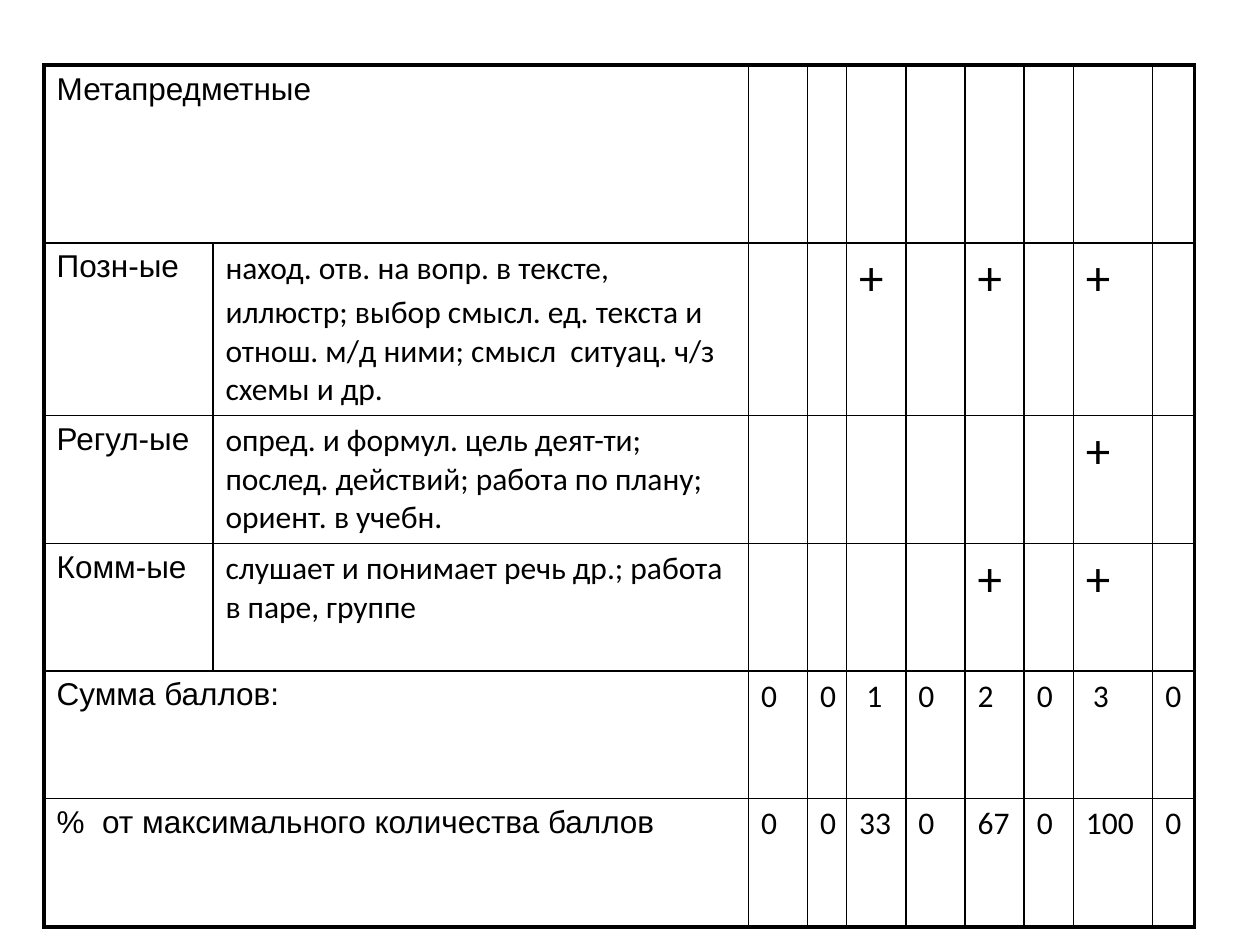
from lxml import etree
from pptx import Presentation
from pptx import util as u
from pptx.dml.color import RGBColor
from pptx.oxml.ns import qn

HUES = {"ink": "000000"}
HEAD = {"name": "Arial", "size": u.Pt(18)}
BODY = {"name": "Calibri", "size": u.Pt(18)}
MARK = {"name": "Calibri", "size": u.Pt(28)}
PADS = {"margin_left": u.Inches(0.1), "margin_right": u.Inches(0.1),
        "margin_top": u.Inches(0.05), "margin_bottom": u.Inches(0.05)}

COLS = [13.4, 42.5, 4.7, 3.1, 4.7, 4.7, 4.7, 3.9, 6.3, 3.3]
ROWS = [18.8, 18.1, 13.5, 13.5, 13.5, 13.6]
SKILLS = [
    ["Метапредметные", None] + [""] * 8,
    ["Позн-ые", "наход. отв. на вопр. в тексте,\nиллюстр; выбор смысл. ед. текста и "
     "отнош. м/д ними; смысл  ситуац. ч/з схемы и др.",
     "", "", "+", "", "+", "", "+", ""],
    ["Регул-ые", "опред. и формул. цель деят-ти; послед. действий; "
     "работа по плану; ориент. в учебн.",
     "", "", "", "", "", "", "+", ""],
    ["Комм-ые", "слушает и понимает речь др.; работа в паре, группе",
     "", "", "", "", "+", "", "+", ""],
    ["Сумма баллов:", None, "0", "0", " 1", "0", "2", "0", " 3", "0"],
    ["%  от максимального количества баллов", None,
     "0", "0", "33", "0", "67", "0", "100", "0"],
]


class Deck:
    """Holds the style and the current slide; lengths are percents of its size."""

    def __init__(self, wide, high):
        self.prs = Presentation()
        self.prs.slide_width = u.Inches(wide)
        self.prs.slide_height = u.Inches(high)
        self.slide = self.prs.slides.add_slide(self.prs.slide_layouts[6])

    def across(self, part):
        return round(self.prs.slide_width * part / 100)

    def down(self, part):
        return round(self.prs.slide_height * part / 100)

    def edge(self, cell, side, width):
        line = etree.SubElement(cell._tc.get_or_add_tcPr(), qn("a:ln" + side),
                                w=str(u.Pt(width)))
        fill = etree.SubElement(line, qn("a:solidFill"))
        etree.SubElement(fill, qn("a:srgbClr"), val=HUES["ink"])

    def label(self, cell, words, font):
        for name, value in PADS.items():
            setattr(cell, name, value)
        cell.text = words
        for para in cell.text_frame.paragraphs:
            gap = etree.SubElement(para._p.get_or_add_pPr(), qn("a:spcBef"))
            etree.SubElement(gap, qn("a:spcPct"), val="20000")
            for item in [para, *para.runs]:
                for name, value in font.items():
                    setattr(item.font, name, value)
                item.font.color.rgb = RGBColor.from_string(HUES["ink"])

    def table(self, left, top, cols, rows, data):
        grid = self.slide.shapes.add_table(
            len(rows), len(cols), self.across(left), self.down(top),
            self.across(sum(cols)), self.down(sum(rows))).table
        grid.first_row = grid.horz_banding = False
        for col, part in zip(grid.columns, cols):
            col.width = self.across(part)
        for row, part in zip(grid.rows, rows):
            row.height = self.down(part)
        for r, line in enumerate(data):
            for c, words in enumerate(line):
                cell = grid.cell(r, c)
                rims = {"L": c == 0, "R": c == len(cols) - 1,
                        "T": r == 0, "B": r == len(rows) - 1}
                for side, outer in rims.items():
                    self.edge(cell, side, 2.25 if outer else 1)
                cell.fill.background()
                if words is None:
                    grid.cell(r, c - 1).merge(cell)
                else:
                    font = HEAD if c == 0 else MARK if words == "+" else BODY
                    self.label(cell, words, font)


def main():
    deck = Deck(10, 7.5)
    deck.table(3.5, 6.9, COLS, ROWS, SKILLS)
    deck.prs.save("out.pptx")


if __name__ == "__main__":
    main()
